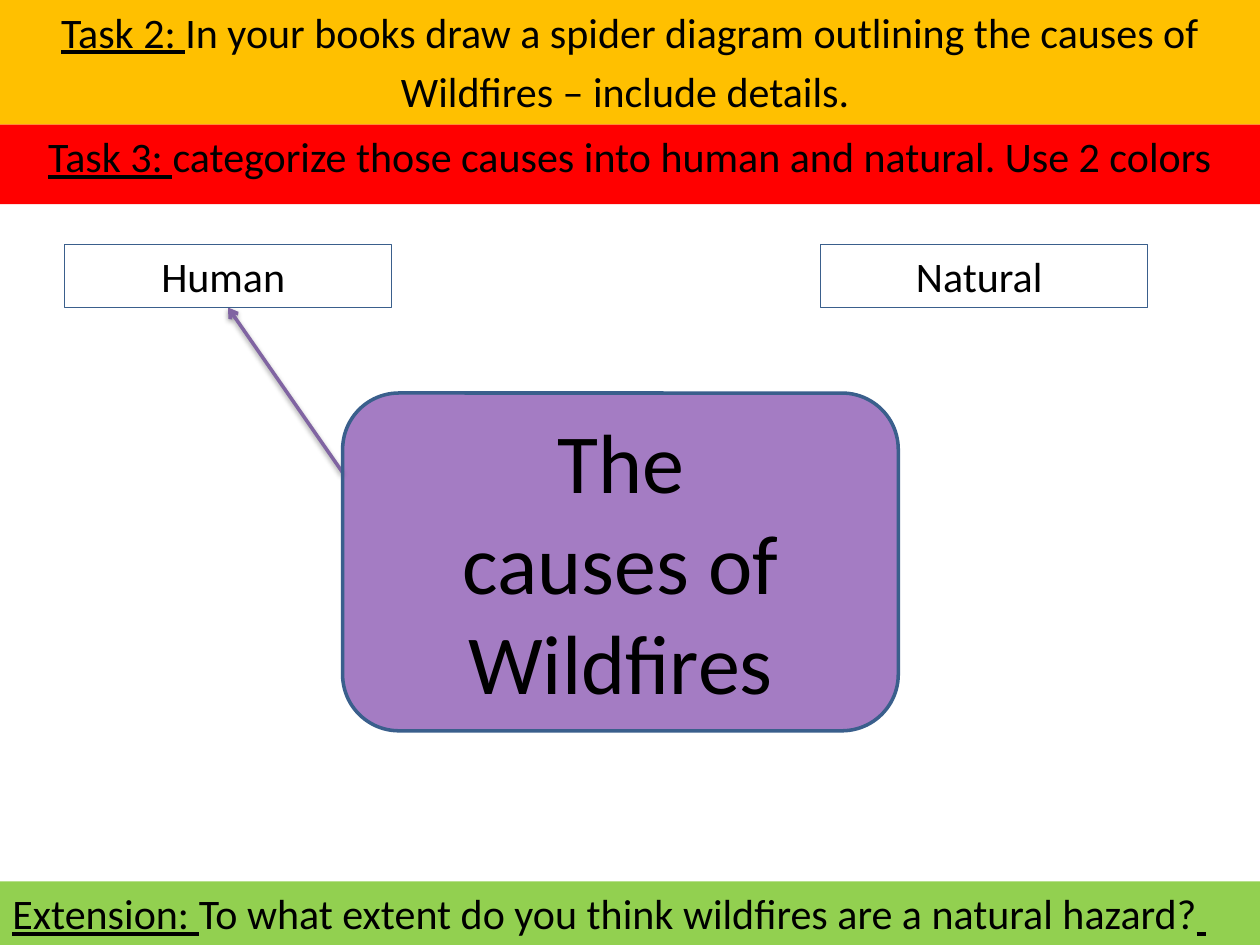
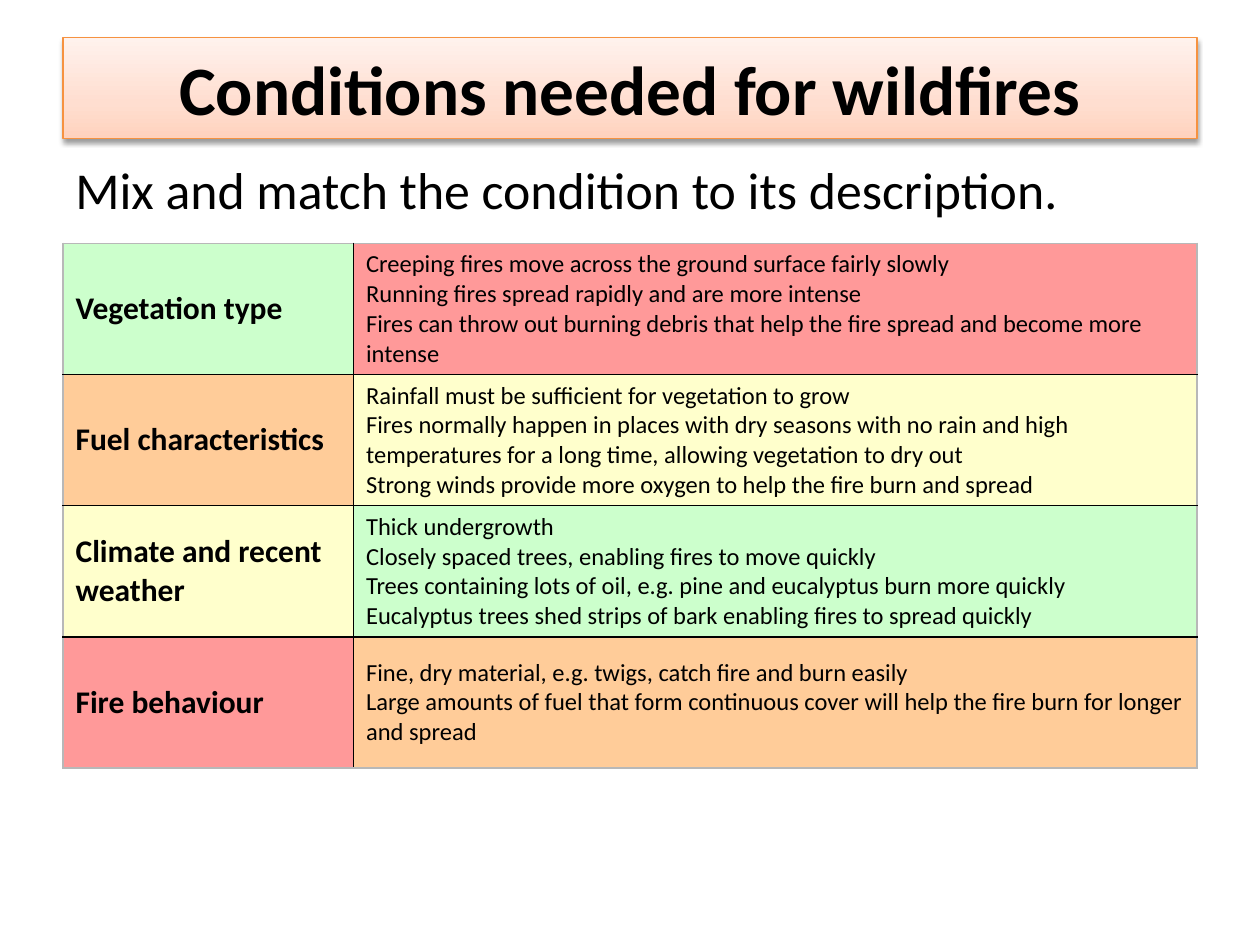
from copy import deepcopy

from lxml.etree import SubElement
from pptx import Presentation
from pptx.dml.color import RGBColor
from pptx.enum.shapes import MSO_CONNECTOR, MSO_SHAPE
from pptx.enum.text import MSO_ANCHOR, PP_ALIGN
from pptx.oxml.ns import qn
from pptx.util import Pt

BLACK = RGBColor(0x00, 0x00, 0x00)
AMBER = RGBColor(0xFF, 0xC0, 0x00)
RED = RGBColor(0xFF, 0x00, 0x00)
LIME = RGBColor(0x92, 0xD0, 0x50)
PURPLE = RGBColor(0x70, 0x30, 0xA0)
VIOLET = RGBColor(0x80, 0x64, 0xA2)
NAVY = RGBColor(0x3A, 0x5F, 0x8C)
ORANGE = RGBColor(0xF6, 0x92, 0x40)
GREY = RGBColor(0xB8, 0xB8, 0xB8)
GREEN_CELL = RGBColor(0xCC, 0xFF, 0xCC)
ORANGE_CELL = RGBColor(0xFF, 0xCC, 0x99)
YELLOW_CELL = RGBColor(0xFF, 0xFF, 0xCC)
RED_CELL = RGBColor(0xFF, 0x99, 0x99)
TITLE_GRADIENT = [
    (0, RGBColor(0xFF, 0xD2, 0xBD)),
    (0.35, RGBColor(0xFF, 0xDE, 0xD0)),
    (1, RGBColor(0xFF, 0xF2, 0xED)),
]
FONT = "Calibri"
SLIDE_WIDTH, SLIDE_HEIGHT = 720, 540
MARGIN = 36
CONTENT_WIDTH = SLIDE_WIDTH - 2 * MARGIN

CONDITIONS = [
    ("Vegetation type", GREEN_CELL, RED_CELL, [
        "Creeping fires move across the ground surface fairly slowly",
        "Running fires spread rapidly and are more intense",
        "Fires can throw out burning debris that help the fire spread and become more intense",
    ]),
    ("Fuel characteristics", ORANGE_CELL, YELLOW_CELL, [
        "Rainfall must be sufficient for vegetation to grow",
        "Fires normally happen in places with dry seasons with no rain and high "
        "temperatures for a long time, allowing vegetation to dry out",
        "Strong winds provide more oxygen to help the fire burn and spread",
    ]),
    ("Climate and recent weather", YELLOW_CELL, GREEN_CELL, [
        "Thick undergrowth",
        "Closely spaced trees, enabling fires to move quickly",
        "Trees containing lots of oil, e.g. pine and eucalyptus burn more quickly",
        "Eucalyptus trees shed strips of bark enabling fires to spread quickly",
    ]),
    ("Fire behaviour", RED_CELL, ORANGE_CELL, [
        "Fine, dry material, e.g. twigs, catch fire and burn easily",
        "Large amounts of fuel that form continuous cover will help the fire burn for longer and spread",
    ]),
]


class Deck:
    def __init__(self):
        self.presentation = Presentation()
        self.presentation.slide_width = Pt(SLIDE_WIDTH)
        self.presentation.slide_height = Pt(SLIDE_HEIGHT)
        self.slide = None

    def add_slide(self):
        self.slide = self.presentation.slides.add_slide(self.presentation.slide_layouts[6])

    def add_text(self, frame, paragraphs, size, align=PP_ALIGN.LEFT, bold=False, space=0):
        frame.word_wrap = True
        for index, runs in enumerate(paragraphs):
            paragraph = frame.add_paragraph() if index else frame.paragraphs[0]
            paragraph.alignment = align
            paragraph.space_before = Pt(space)
            for text, underline in runs:
                run = paragraph.add_run()
                run.text = text
                run.font.name = FONT
                run.font.size = Pt(size)
                run.font.bold = bold
                run.font.underline = underline
                run.font.color.rgb = BLACK

    def shape(self, box, kind=MSO_SHAPE.RECTANGLE, fill=None, line=None, line_width=0.75):
        shape = self.slide.shapes.add_shape(kind, *map(Pt, box))
        shape.shadow.inherit = False
        if fill is None:
            shape.fill.background()
        else:
            shape.fill.solid()
            shape.fill.fore_color.rgb = fill
        if line is None:
            shape.line.fill.background()
        else:
            shape.line.color.rgb = line
            shape.line.width = Pt(line_width)
        return shape

    def band(self, top, height, fill, paragraphs, align=PP_ALIGN.CENTER):
        shape = self.shape((0, top, SLIDE_WIDTH, height), fill=fill)
        shape.text_frame.vertical_anchor = MSO_ANCHOR.TOP
        self.add_text(shape.text_frame, paragraphs, 24, align, space=4.8)

    def label(self, box, text):
        shape = self.shape(box, line=NAVY)
        self.add_text(shape.text_frame, [[(text, False)]], 24, PP_ALIGN.CENTER)

    def text(self, box, text, size, align=PP_ALIGN.LEFT):
        frame = self.slide.shapes.add_textbox(*map(Pt, box)).text_frame
        self.add_text(frame, [[(text, False)]], size, align)

    def drop_shadow(self, properties):
        effects = properties.find(qn("a:effectLst"))
        if effects is None:
            effects = SubElement(properties, qn("a:effectLst"))
        shadow = SubElement(effects, qn("a:outerShdw"), blurRad=str(Pt(3.1)),
                            dist=str(Pt(1.6)), dir="5400000", rotWithShape="0")
        color = SubElement(shadow, qn("a:srgbClr"), val=str(BLACK))
        SubElement(color, qn("a:alpha"), val="38000")

    def arrow(self, start, end, color, width):
        connector = self.slide.shapes.add_connector(
            MSO_CONNECTOR.STRAIGHT, *map(Pt, (*start, *end)))
        connector.line.color.rgb = color
        connector.line.width = Pt(width)
        properties = connector._element.spPr
        SubElement(properties.find(qn("a:ln")), qn("a:tailEnd"), type="arrow")
        self.drop_shadow(properties)

    def translucent_panel(self, box, color, opacity):
        shape = self.shape(box, MSO_SHAPE.ROUNDED_RECTANGLE, color, NAVY, 2)
        fill = shape._element.spPr.find(qn("a:solidFill"))
        SubElement(fill[0], qn("a:alpha"), val=str(opacity * 1000))

    def title(self, box, text):
        shape = self.shape(box, line=ORANGE)
        shape.fill.gradient()
        shape.fill.gradient_angle = 90
        properties = shape._element.spPr
        stops = properties.find(qn("a:gradFill")).find(qn("a:gsLst"))
        stops.append(deepcopy(stops[0]))
        for stop, (position, color) in zip(shape.fill.gradient_stops, TITLE_GRADIENT):
            stop.position = position
            stop.color.rgb = color
        self.drop_shadow(properties)
        shape.text_frame.vertical_anchor = MSO_ANCHOR.MIDDLE
        self.add_text(shape.text_frame, [[(text, False)]], 39.6, PP_ALIGN.CENTER, bold=True)

    def cell(self, cell, paragraphs, size, fill, bold, borders):
        cell.fill.solid()
        cell.fill.fore_color.rgb = fill
        cell.vertical_anchor = MSO_ANCHOR.MIDDLE
        self.add_text(cell.text_frame, [[(text, False)] for text in paragraphs], size, bold=bold)
        properties = cell._tc.get_or_add_tcPr()
        for index, (side, color) in enumerate(borders.items()):
            line = SubElement(properties, qn(f"a:ln{side}"), w=str(Pt(1)))
            SubElement(SubElement(line, qn("a:solidFill")), qn("a:srgbClr"), val=str(color))
            properties.insert(index, line)

    def matching_table(self, box, column_widths, conditions):
        last = len(conditions) - 1
        table = self.slide.shapes.add_table(len(conditions), 2, *map(Pt, box)).table
        table.first_row = table.horz_banding = False
        for column, width in zip(table.columns, column_widths):
            column.width = Pt(width)
        for row, (name, name_fill, description_fill, description) in enumerate(conditions):
            top = BLACK if row else GREY
            bottom = BLACK if row < last else GREY
            self.cell(table.cell(row, 0), [name], 18, name_fill, True,
                      {"L": GREY, "R": BLACK, "T": top, "B": bottom})
            self.cell(table.cell(row, 1), description, 14, description_fill, False,
                      {"L": BLACK, "R": GREY, "T": top, "B": bottom})


def build_spider_diagram(deck):
    deck.add_slide()
    deck.arrow((195.8, 270), (130.3, 175.7), VIOLET, 2)
    deck.band(0, 71.3, AMBER, [
        [("Task 2: ", True),
         ("In your books draw a spider diagram outlining the causes of", False)],
        [("Wildfires – include details. ", False)],
    ])
    deck.band(71.3, 45.4, RED, [
        [("Task 3: ", True),
         ("categorize those causes into human and natural. Use 2 colors", False)],
    ])
    deck.translucent_panel((195.8, 224.6, 317.5, 193), PURPLE, 63)
    deck.text((247, 230.4, 215.3, 181.4), "The causes of Wildfires", 48, PP_ALIGN.CENTER)
    for left, category in ((36.7, "Human "), (468.7, "Natural ")):
        deck.label((left, 139.7, 187.2, 36), category)
    deck.band(503.7, 36.3, LIME, [
        [("Extension: ", True),
         ("To what extent do you think wildfires are a natural hazard?", False),
         (" ", True)],
    ], PP_ALIGN.LEFT)


def build_conditions(deck):
    deck.add_slide()
    deck.title((MARGIN, 21.6, CONTENT_WIDTH, 57.6), "Conditions needed for wildfires")
    deck.text((MARGIN, 86.4, CONTENT_WIDTH, 39.6),
              "Mix and match the condition to its description.", 29.6)
    deck.matching_table((MARGIN, 139, CONTENT_WIDTH, 300), (166, CONTENT_WIDTH - 166), CONDITIONS)


def main():
    deck = Deck()
    build_spider_diagram(deck)
    build_conditions(deck)
    deck.presentation.save("out.pptx")


if __name__ == "__main__":
    main()
